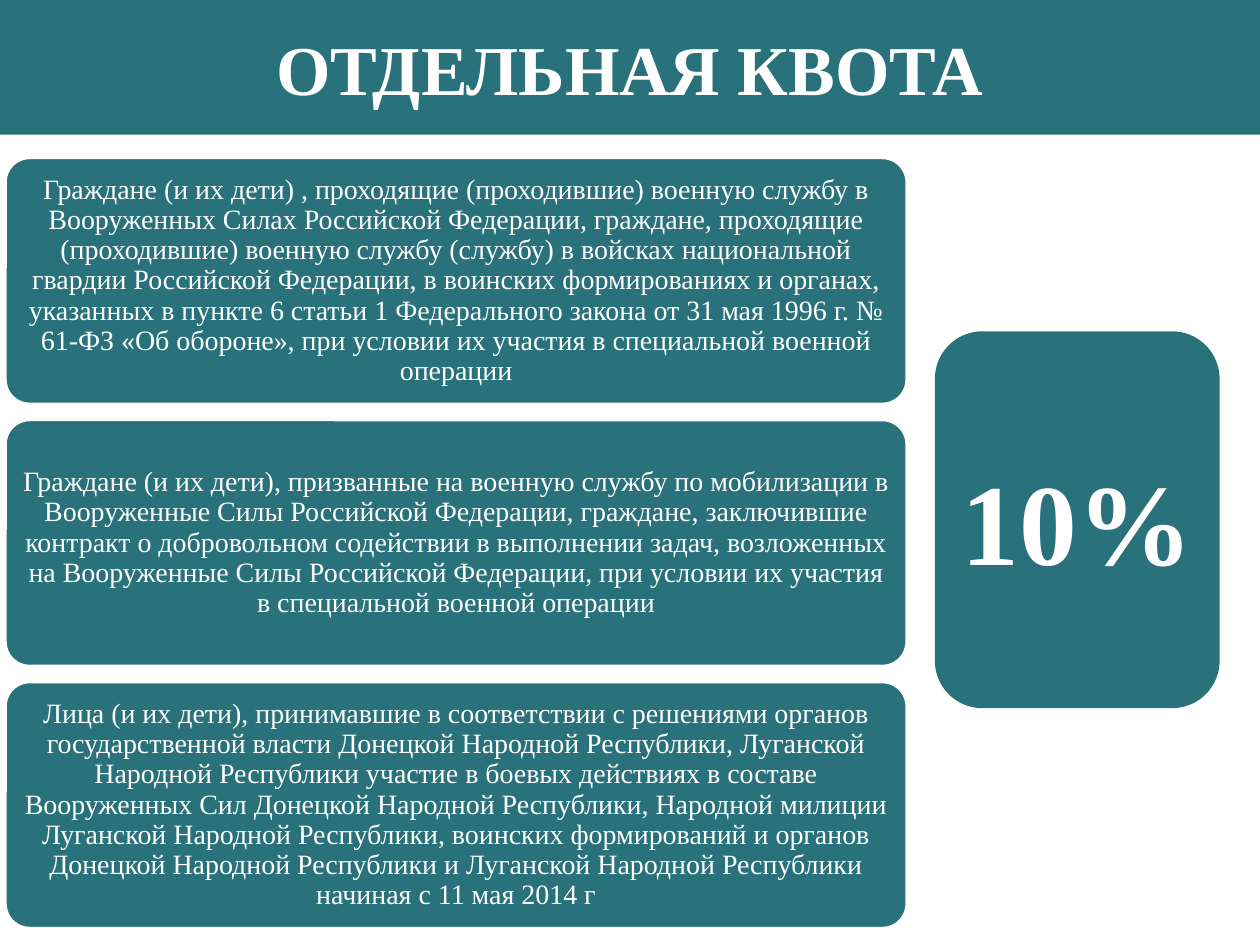
from pptx import Presentation
from pptx.dml.color import RGBColor
from pptx.enum.shapes import MSO_SHAPE
from pptx.enum.text import MSO_ANCHOR, PP_ALIGN
from pptx.util import Inches, Pt

RECT = MSO_SHAPE.RECTANGLE
ROUND = MSO_SHAPE.ROUNDED_RECTANGLE
MIDDLE = MSO_ANCHOR.MIDDLE
CENTER = PP_ALIGN.CENTER
FONT = "Times New Roman"
COLORS = {"teal": "2A727B", "white": "FFFFFF"}

GROUPS = [
    "Граждане (и их дети) , проходящие (проходившие) военную службу в "
    "Вооруженных Силах Российской Федерации, граждане, проходящие "
    "(проходившие) военную службу (службу) в войсках национальной гвардии "
    "Российской Федерации, в воинских формированиях и органах, указанных в "
    "пункте 6 статьи 1 Федерального закона от 31 мая 1996 г. № 61-ФЗ "
    "«Об обороне», при условии их участия в специальной военной операции",
    "Граждане (и их дети), призванные на военную службу по мобилизации в "
    "Вооруженные Силы Российской Федерации, граждане, заключившие контракт "
    "о добровольном содействии в выполнении задач, возложенных на "
    "Вооруженные Силы Российской Федерации, при условии их участия в "
    "специальной военной операции",
    "Лица (и их дети), принимавшие в соответствии с решениями органов "
    "государственной власти Донецкой Народной Республики, Луганской "
    "Народной Республики участие в боевых действиях в составе Вооруженных "
    "Сил Донецкой Народной Республики, Народной милиции Луганской Народной "
    "Республики, воинских формирований и органов Донецкой Народной "
    "Республики и Луганской Народной Республики начиная с 11 мая 2014 г",
]


def color(name):
    return RGBColor.from_string(COLORS[name])


def add_block(slide, kind, box, text, size, bold=False):
    shape = slide.shapes.add_shape(kind, *(Inches(v) for v in box))
    shape.shadow.inherit = False
    shape.fill.solid()
    shape.fill.fore_color.rgb = color("teal")
    shape.line.fill.background()
    frame = shape.text_frame
    frame.word_wrap = True
    frame.vertical_anchor = MIDDLE
    para = frame.paragraphs[0]
    para.alignment = CENTER
    run = para.add_run()
    run.text = text
    run.font.name = FONT
    run.font.size = Pt(size)
    run.font.bold = bold
    run.font.color.rgb = color("white")
    return shape


def add_title(slide, box):
    add_block(slide, RECT, box, "ОТДЕЛЬНАЯ КВОТА", 40, True)


def add_card(slide, box, text):
    card = add_block(slide, ROUND, box, text, 16)
    card.adjustments[0] = 0.1
    card.line.color.rgb = color("white")
    card.line.width = Pt(2)
    frame = card.text_frame
    frame.margin_left = frame.margin_right = Inches(0.07)
    frame.margin_top = frame.margin_bottom = Inches(0.07)
    frame.paragraphs[0].line_spacing = 0.9


def add_cards(slide, box, gap):
    left, top, width, height = box
    count = len(GROUPS)
    tall = (height - gap * (count - 1)) / count
    for i, text in enumerate(GROUPS):
        add_card(slide, (left, top + i * (tall + gap), width, tall), text)


def add_quota(slide, box):
    add_block(slide, ROUND, box, "10%", 66, True)


def main():
    deck = Presentation()
    deck.slide_width = Inches(10)
    deck.slide_height = Inches(7.5)
    slide = deck.slides.add_slide(deck.slide_layouts[6])
    add_title(slide, (0, 0, 10, 1.07))
    add_cards(slide, (0.04, 1.25, 7.16, 6.12), 0.12)
    add_quota(slide, (7.42, 2.63, 2.26, 2.99))
    deck.save("out.pptx")


if __name__ == "__main__":
    main()
